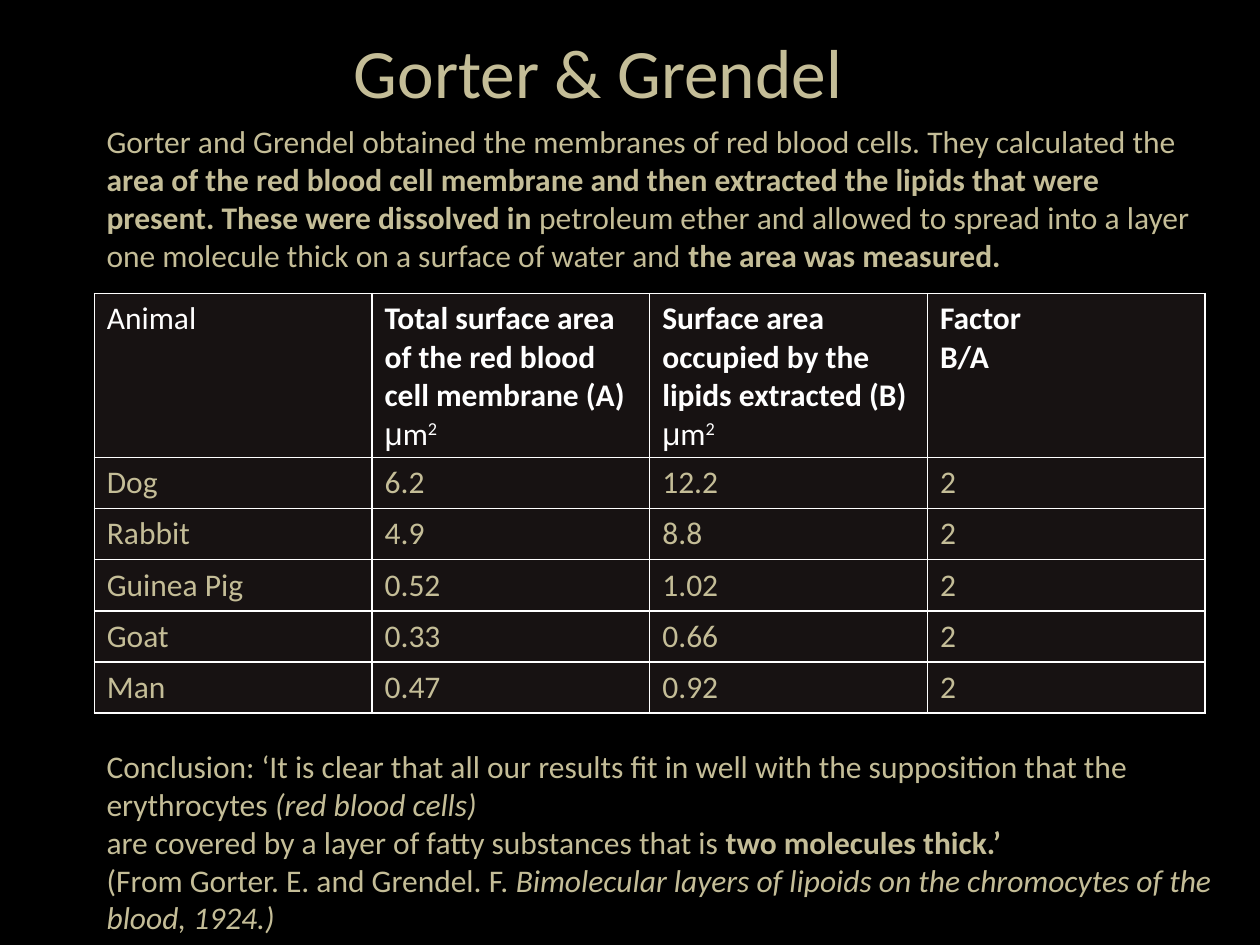
from lxml import etree
from pptx import Presentation
from pptx.dml.color import RGBColor
from pptx.oxml.ns import qn
from pptx.util import Cm, Pt
from pptx.enum import text

# Content: a paragraph is a list of (wording, format) runs
COLORS = {"back": "000000", "sand": "C4BD97", "white": "FFFFFF", "tint": "E6B9B8"}
BOLD, ITALIC, PLAIN = {"bold": True}, {"italic": True}, {}
MU, SQUARE = {"name": "Arial"}, {"baseline": "30000"}
UNIT = [("μ", MU), ("m", PLAIN), ("2", SQUARE)]

TITLE = [[("Gorter & Grendel", {"size": Pt(39.6)})]]
INTRO = [[
    ("Gorter and Grendel obtained the membranes of red blood cells. They calculated the ", PLAIN),
    ("area of the red blood cell membrane and then extracted the lipids that were present. "
     "These were dissolved in ", BOLD),
    ("petroleum ether and allowed to spread into a layer one molecule thick "
     "on a surface of water and ", PLAIN),
    ("the area was measured.", BOLD),
]]
HEADER = [
    [[("Animal", PLAIN)]],
    [[("Total surface area of the red blood cell membrane (A) ", BOLD)] + UNIT],
    [[("Surface area", BOLD)], [("occupied by the", BOLD)],
     [("lipids extracted (B)", BOLD), (" ", MU)] + UNIT],
    [[("Factor", BOLD)], [("B/A", BOLD)]],
]
ANIMALS = [
    ("Dog", "6.2", "12.2", "2"),
    ("Rabbit", "4.9", "8.8", "2"),
    ("Guinea Pig", "0.52", "1.02", "2"),
    ("Goat", "0.33", "0.66", "2"),
    ("Man", "0.47", "0.92", "2"),
]
CONCLUSION = [
    [("Conclusion: ‘It is clear that all our results fit in well with the supposition "
      "that the erythrocytes ", PLAIN), ("(red blood cells)", ITALIC)],
    [("are covered by a layer of fatty substances that is ", PLAIN),
     ("two molecules thick.’", BOLD)],
    [("(From Gorter. E. and Grendel. F. ", PLAIN),
     ("Bimolecular layers of lipoids on the chromocytes of the blood, 1924.)", ITALIC)],
]

# Layout in centimetres
LEFT, TABLE_TOP, TABLE_WIDTH = 1.9, 5.92, 22.4
HEADER_HEIGHT, ROW_HEIGHT = 3.3, 1.03


def write(tf, paragraphs, color="sand", align=text.PP_ALIGN.LEFT):
    for i, runs in enumerate(paragraphs):
        p = tf.paragraphs[0] if i == 0 else tf.add_paragraph()
        p.alignment = align
        for wording, extra in runs:
            r = p.add_run()
            r.text = wording
            style = {"name": "Calibri", "size": Pt(18), "bold": False, "italic": False, **extra}
            baseline = style.pop("baseline", None)
            for key, value in style.items():
                setattr(r.font, key, value)
            r.font.color.rgb = RGBColor.from_string(COLORS[color])
            if baseline:
                r._r.get_or_add_rPr().set("baseline", baseline)


def add_text(s, box, paragraphs, anchor=text.MSO_ANCHOR.TOP, **options):
    tf = s.shapes.add_textbox(*map(Cm, box)).text_frame
    tf.word_wrap = True
    tf.vertical_anchor = anchor
    write(tf, paragraphs, **options)


def style_cell(cell):
    cell.fill.solid()
    cell.fill.fore_color.rgb = RGBColor.from_string(COLORS["tint"])
    tcPr = cell._tc.get_or_add_tcPr()
    tint = tcPr.find(qn("a:solidFill")).find(qn("a:srgbClr"))
    etree.SubElement(tint, qn("a:alpha"), val="10000")
    for i, side in enumerate("LRTB"):
        ln = etree.Element(qn(f"a:ln{side}"), w=str(Pt(1)))
        fill = etree.SubElement(ln, qn("a:solidFill"))
        etree.SubElement(fill, qn("a:srgbClr"), val=COLORS["white"])
        tcPr.insert(i, ln)


def add_results(s):
    rows = [HEADER] + [[[[(value, PLAIN)]] for value in row] for row in ANIMALS]
    heights = [HEADER_HEIGHT] + [ROW_HEIGHT] * len(ANIMALS)
    box = (LEFT, TABLE_TOP, TABLE_WIDTH, sum(heights))
    table = s.shapes.add_table(len(rows), len(HEADER), *map(Cm, box)).table
    table.first_row = table.horz_banding = False
    for column in table.columns:
        column.width = Cm(TABLE_WIDTH / len(HEADER))
    for i, (row, height) in enumerate(zip(rows, heights)):
        table.rows[i].height = Cm(height)
        for j, paragraphs in enumerate(row):
            cell = table.cell(i, j)
            write(cell.text_frame, paragraphs, "sand" if i else "white")
            style_cell(cell)


def main():
    prs = Presentation()
    prs.slide_width, prs.slide_height = Cm(25.4), Cm(19.05)
    s = prs.slides.add_slide(prs.slide_layouts[6])
    s.background.fill.solid()
    s.background.fill.fore_color.rgb = RGBColor.from_string(COLORS["back"])

    # Title and introduction
    add_text(s, (LEFT, 0.53, 20.32, 1.8), TITLE, text.MSO_ANCHOR.MIDDLE,
             align=text.PP_ALIGN.CENTER)
    add_text(s, (LEFT, 2.34, 22.4, 3.33), INTRO)
    # Measurements
    add_results(s)
    # Conclusion
    add_text(s, (LEFT, 14.94, 22.81, 4.11), CONCLUSION)
    prs.save("out.pptx")


if __name__ == "__main__":
    main()
